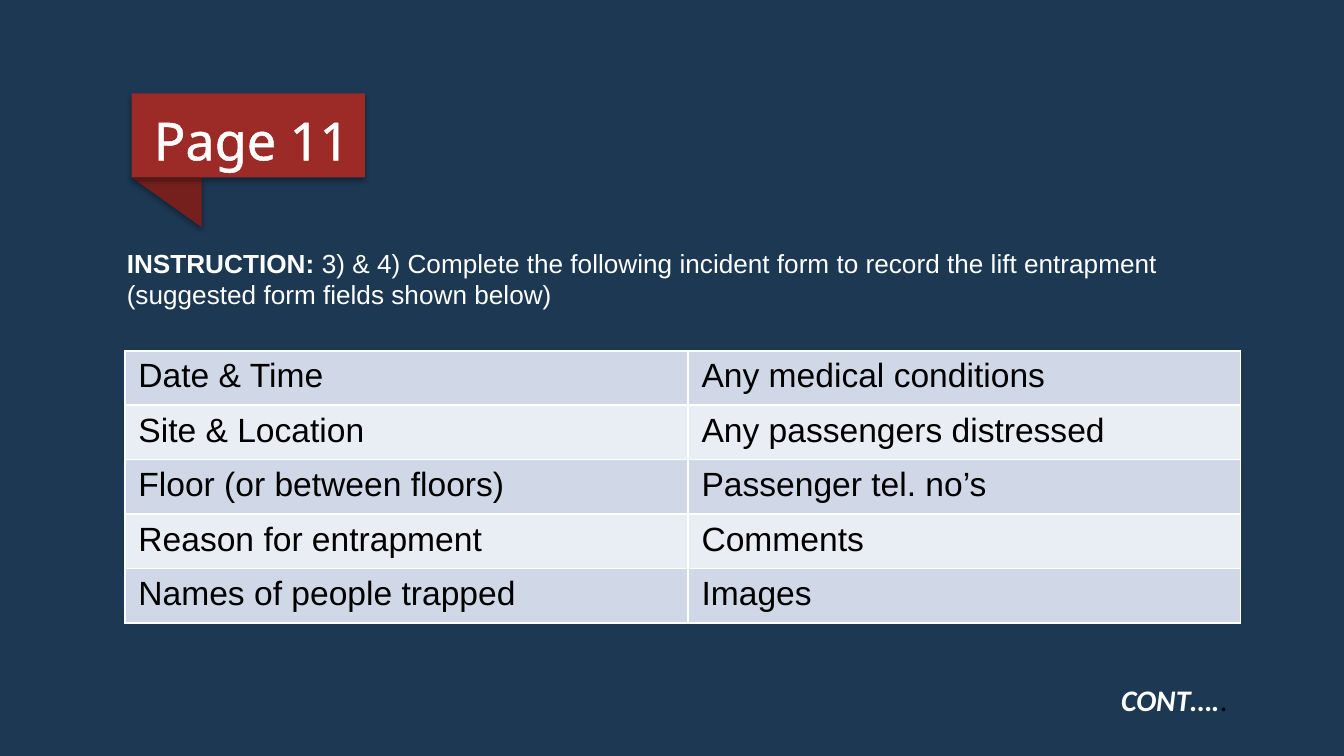
from lxml import etree
from pptx import Presentation
from pptx.dml.color import RGBColor
from pptx.enum.shapes import MSO_SHAPE
from pptx.enum.text import MSO_ANCHOR, MSO_AUTO_SIZE, PP_ALIGN
from pptx.oxml import parse_xml
from pptx.oxml.ns import nsdecls, qn
from pptx.util import Emu, Pt

RECT, TRIANGLE = MSO_SHAPE.RECTANGLE, MSO_SHAPE.RIGHT_TRIANGLE
TOP = MSO_ANCHOR.TOP
LEFT, RIGHT = PP_ALIGN.LEFT, PP_ALIGN.RIGHT
NO_FIT = MSO_AUTO_SIZE.NONE
TITLE_ONLY = 5
PX = 4572
COLORS = {
    "background": "1C3853", "ribbon": "9C2A27", "fold": "76201E",
    "white": "FFFFFF", "black": "000000",
    "odd_row": "D0D8E8", "even_row": "E9EDF4",
}
FIELDS = [
    ("Date & Time", "Any medical conditions"),
    ("Site & Location", "Any passengers distressed"),
    ("Floor (or between floors)", "Passenger tel. no’s"),
    ("Reason for entrapment", "Comments"),
    ("Names of people trapped", "Images"),
]


def rgb(name):
    """Return the named colour."""
    return RGBColor.from_string(COLORS[name])


def box(x, y, w, h):
    """Turn a box in px into EMU."""
    return [Emu(v * PX) for v in (x, y, w, h)]


def line_xml(tag, color, width=1):
    """Return a solid line element, with its width in points."""
    return parse_xml(
        f'<a:{tag} {nsdecls("a")} w="{Pt(width)}"><a:solidFill>'
        f'<a:srgbClr val="{COLORS[color]}"/></a:solidFill></a:{tag}>')


def add_run(p, text, size=14, font="Arial", color="white", bold=False,
            italic=False, outline=None):
    """Append a formatted run to a paragraph."""
    r = p.add_run()
    r.text = text
    f = r.font
    f.size, f.name, f.bold, f.italic = Pt(size), font, bold, italic
    f.color.rgb = rgb(color)
    if outline:
        r._r.get_or_add_rPr().insert(0, line_xml("ln", outline))


def format_frame(tf, align=LEFT):
    """Set up a wrapped, top-anchored frame and return its paragraph."""
    tf.word_wrap, tf.auto_size, tf.vertical_anchor = True, NO_FIT, TOP
    p = tf.paragraphs[0]
    p.alignment = align
    return p


def add_shadow(sp):
    """Give a shape a soft shadow below it."""
    sp.shadow.inherit = False
    effects = sp._element.spPr.find(qn("a:effectLst"))
    shadow = etree.SubElement(
        effects, qn("a:outerShdw"), blurRad=str(Pt(3.1)), dist=str(Pt(1.8)),
        dir="5400000", rotWithShape="0")
    color = etree.SubElement(shadow, qn("a:srgbClr"), val=COLORS["black"])
    etree.SubElement(color, qn("a:alpha"), val="35000")


def add_ribbon(s, text, x, y, w, h):
    """Place the folded ribbon behind the slide title."""
    ribbon_h, fold_w = 125, 104
    group = s.shapes.add_group_shape()
    for kind, color, angle, part in (
            (TRIANGLE, "fold", 180, (x, y + ribbon_h, fold_w, h - ribbon_h)),
            (RECT, "ribbon", 0, (x, y, w, ribbon_h))):
        sp = group.shapes.add_shape(kind, *box(*part))
        sp.rotation = angle
        sp.fill.solid()
        sp.fill.fore_color.rgb = rgb(color)
        sp.line.fill.background()
        add_shadow(sp)
    title = s.shapes.title
    title.element.addprevious(group.element)
    title.left, title.top, title.width, title.height = box(
        x + 13, y - 35, 776, 154)
    p = format_frame(title.text_frame)
    p.line_spacing = 1.5
    add_run(p, text, size=28, font="Noto Sans", outline="white")


def add_text(s, runs, x, y, w, h, align=LEFT):
    """Place a text box made of (text, format) runs."""
    sp = s.shapes.add_textbox(*box(x, y, w, h))
    p = format_frame(sp.text_frame, align)
    for text, style in runs:
        add_run(p, text, **style)


def add_form(s, fields, x, y, w, h):
    """Place the table of form fields with alternating row fills."""
    first_w = 838
    table = s.shapes.add_table(len(fields), 2, *box(x, y, w, h)).table
    for column, width in zip(table.columns, (first_w, w - first_w)):
        column.width = Emu(width * PX)
    for i, row in enumerate(fields):
        table.rows[i].height = Emu(h * PX // len(fields))
        for j, text in enumerate(row):
            cell = table.cell(i, j)
            cell.fill.solid()
            cell.fill.fore_color.rgb = rgb("even_row" if i % 2 else "odd_row")
            add_run(cell.text_frame.paragraphs[0], text, size=18,
                    color="black")
            for k, tag in enumerate(("lnL", "lnR", "lnT", "lnB")):
                cell._tc.get_or_add_tcPr().insert(k, line_xml(tag, "white"))


def build_slide(prs):
    """Build the incident form slide."""
    s = prs.slides.add_slide(prs.slide_layouts[TITLE_ONLY])
    s.background.fill.solid()
    s.background.fill.fore_color.rgb = rgb("background")
    add_ribbon(s, "Page 11", 196, 139, 347, 199)
    add_text(s, [
        ("INSTRUCTION:", {"bold": True}),
        (" 3) & 4) Complete the following incident form to record the lift "
         "entrapment (suggested form fields shown below)", {}),
    ], 169, 358, 1696, 114)
    add_form(s, FIELDS, 186, 522, 1660, 405)
    note = {"size": 16, "font": "Calibri"}
    add_text(s, [
        ("CONT….", {**note, "bold": True, "italic": True}),
        (".", {**note, "color": "black"}),
    ], 196, 1004, 1650, 74, align=RIGHT)


def main():
    """Create and save the presentation."""
    prs = Presentation()
    prs.slide_width, prs.slide_height = box(0, 0, 2000, 1125)[2:]
    build_slide(prs)
    prs.save("out.pptx")


if __name__ == "__main__":
    main()
